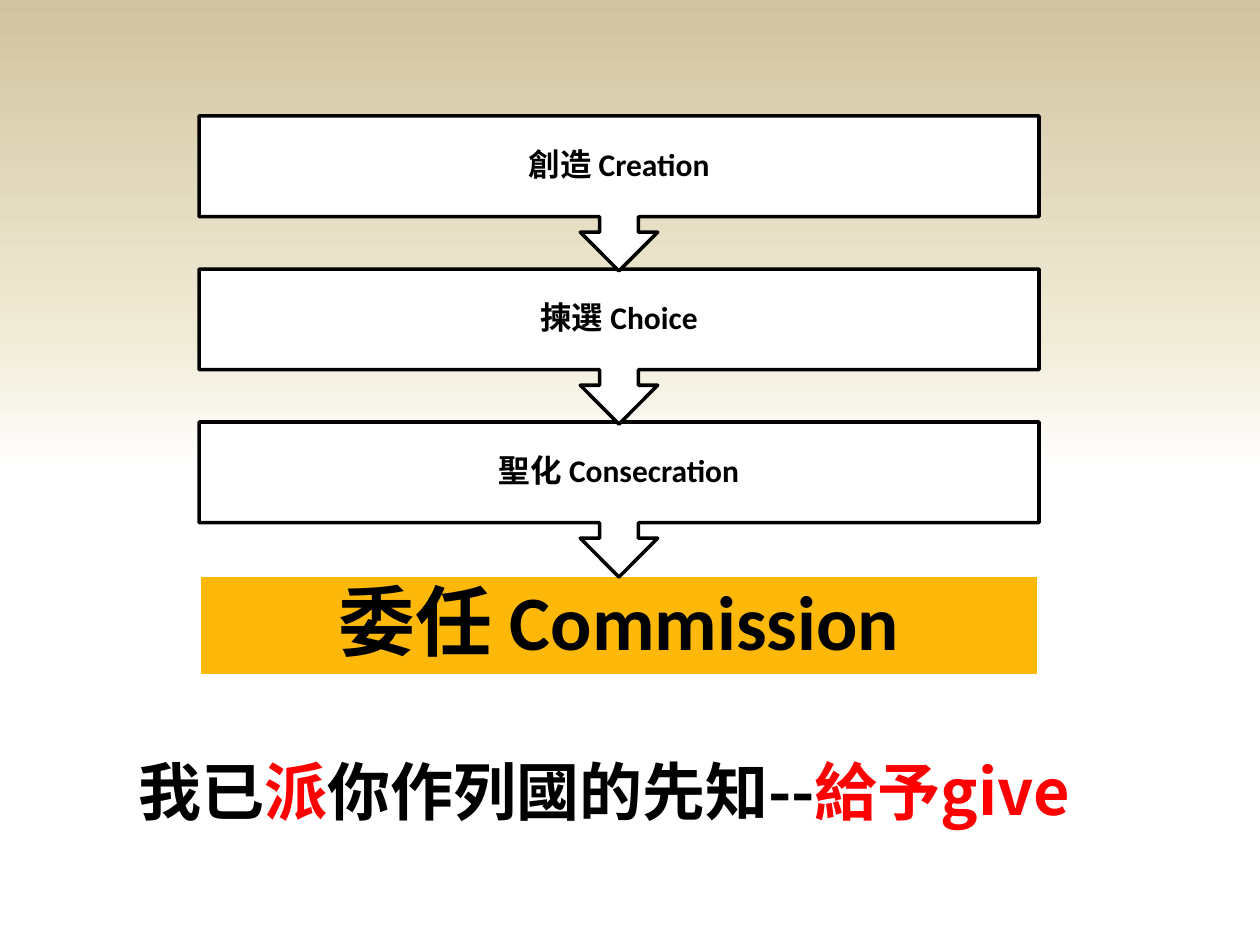
import copy
from dataclasses import dataclass

import pptx
import pptx.dml.color
import pptx.enum.shapes
import pptx.enum.text
import pptx.oxml
import pptx.oxml.ns
import pptx.util

RGBColor = pptx.dml.color.RGBColor
Shape = pptx.enum.shapes.MSO_SHAPE

BLACK = RGBColor(0x00, 0x00, 0x00)
WHITE = RGBColor(0xFF, 0xFF, 0xFF)
RED = RGBColor(0xFF, 0x00, 0x00)
AMBER = RGBColor(0xFE, 0xB8, 0x0A)
CREAM = RGBColor(0xF0, 0xEB, 0xD5)
SAND = RGBColor(0xD1, 0xC3, 0x9F)

LATIN_FONT = "Calibri"
CHINESE_FONT = "Noto Sans CJK SC"
EMU_PER_PX = 914400 / 126
BACKGROUND_STOPS = ((0.5, WHITE), (0.65, CREAM), (1.0, SAND))

STEP_LEFT, STEP_TOP, STEP_WIDTH, STEP_PITCH = 199, 116, 840, 153


@dataclass
class Step:
    text: str
    preset: Shape = Shape.DOWN_ARROW_CALLOUT
    height: int = 155
    fill: RGBColor = WHITE
    line: RGBColor = BLACK
    size: int = 18
    inset: int = 18


STEPS = (
    Step("創造 Creation"),
    Step("揀選 Choice"),
    Step("聖化 Consecration"),
    Step("委任 Commission", Shape.RECTANGLE, 101, AMBER, WHITE, 44, 43),
)
VERSE = (("我已", BLACK), ("派", RED), ("你作列國的先知--", BLACK), ("給予give", RED))


def px(length: int) -> int:
    return round(length * EMU_PER_PX)


def set_values(target, values: dict) -> None:
    for name, value in values.items():
        setattr(target, name, value)


def add_run(paragraph, text: str, font_name: str, size: int, color: RGBColor) -> None:
    run = paragraph.add_run()
    run.text = text
    set_values(run.font, {"name": font_name, "size": pptx.util.Pt(size), "bold": True})
    run.font.color.rgb = color
    east_asian = pptx.oxml.parse_xml(
        f'<a:ea {pptx.oxml.ns.nsdecls("a")} typeface="{CHINESE_FONT}"/>'
    )
    run.font._element.find(pptx.oxml.ns.qn("a:latin")).addnext(east_asian)


def paint_background(slide) -> None:
    fill = slide.background.fill
    fill.gradient()
    fill.gradient_angle = 90
    stop_list = next(slide.element.iter(pptx.oxml.ns.qn("a:gsLst")))
    while len(stop_list) < len(BACKGROUND_STOPS):
        stop_list.append(copy.deepcopy(stop_list[-1]))
    for stop, (position, color) in zip(fill.gradient_stops, BACKGROUND_STOPS):
        stop.position = position
        stop.color.rgb = color


def add_step(slide, step: Step, top: int) -> None:
    shape = slide.shapes.add_shape(
        step.preset, px(STEP_LEFT), px(top), px(STEP_WIDTH), px(step.height)
    )
    shape.shadow.inherit = False
    shape.fill.solid()
    shape.fill.fore_color.rgb = step.fill
    shape.line.color.rgb = step.line
    shape.line.width = pptx.util.Pt(2)
    frame = shape.text_frame
    set_values(frame, {
        "word_wrap": True,
        "vertical_anchor": pptx.enum.text.MSO_ANCHOR.MIDDLE,
        **{f"margin_{side}": px(step.inset) for side in ("left", "top", "right", "bottom")},
    })
    paragraph = frame.paragraphs[0]
    set_values(paragraph, {
        "alignment": pptx.enum.text.PP_ALIGN.CENTER,
        "line_spacing": 0.9,
    })
    add_run(paragraph, step.text, LATIN_FONT, step.size, BLACK)


def add_verse(slide) -> None:
    box = slide.shapes.add_textbox(px(126), px(746), px(980), px(89))
    box.text_frame.word_wrap = True
    for text, color in VERSE:
        add_run(box.text_frame.paragraphs[0], text, CHINESE_FONT, 36, color)


def main() -> None:
    presentation = pptx.Presentation()
    set_values(presentation, {"slide_width": px(1260), "slide_height": px(945)})
    slide = presentation.slides.add_slide(presentation.slide_layouts[6])
    paint_background(slide)
    # The last step goes in first, so each arrow tip lies over the step below it.
    for index, step in reversed(list(enumerate(STEPS))):
        add_step(slide, step, STEP_TOP + index * STEP_PITCH)
    add_verse(slide)
    presentation.save("out.pptx")


if __name__ == "__main__":
    main()
